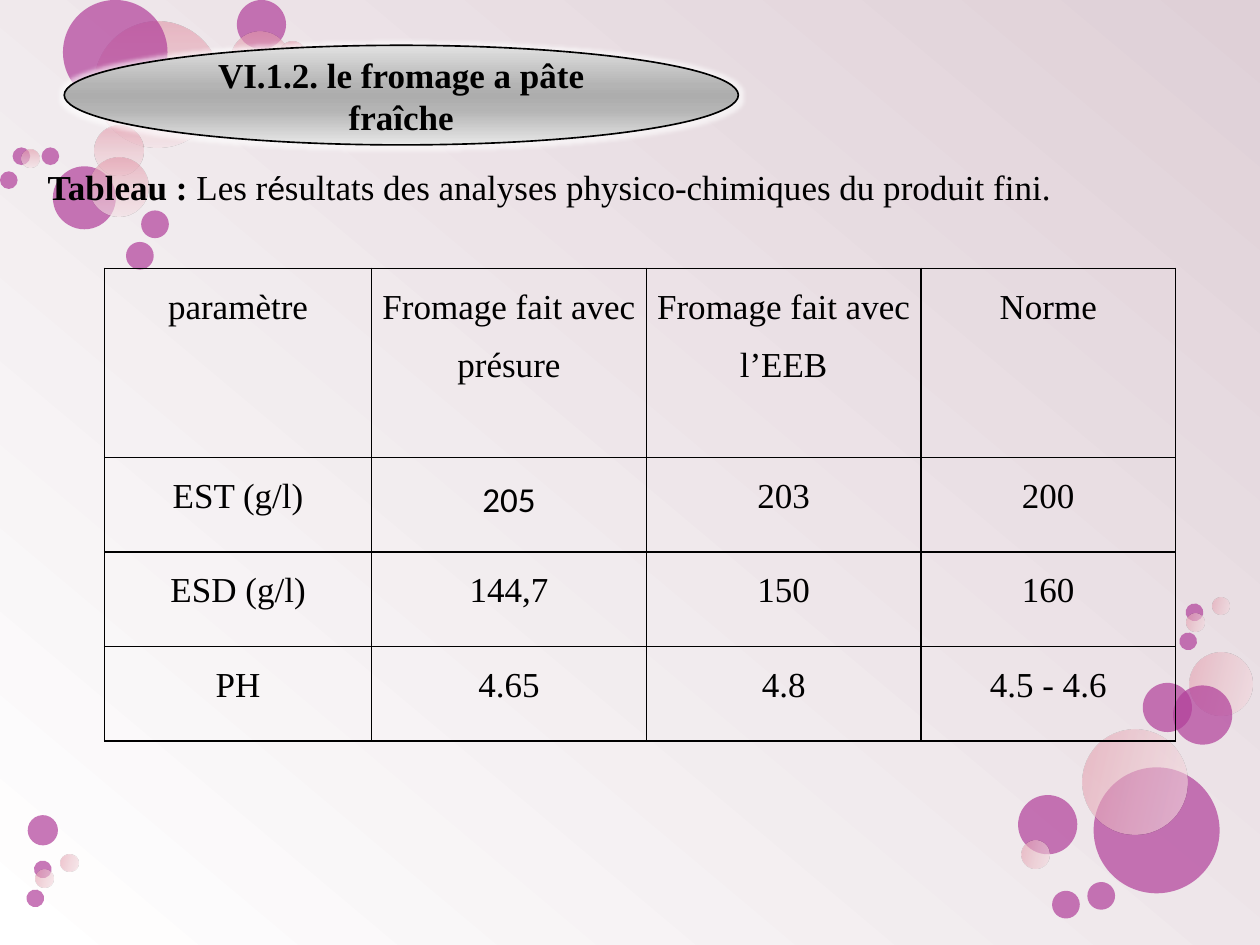
from lxml import etree
from pptx import Presentation
from pptx.dml.color import RGBColor
from pptx.enum.shapes import MSO_SHAPE
from pptx.enum.text import MSO_ANCHOR, MSO_AUTO_SIZE, PP_ALIGN
from pptx.oxml.ns import qn
from pptx.util import Pt

PX = 9144
OVAL = MSO_SHAPE.OVAL
MIDDLE = MSO_ANCHOR.MIDDLE
FIT_SHAPE = MSO_AUTO_SIZE.SHAPE_TO_FIT_TEXT
LEFT, CENTER = PP_ALIGN.LEFT, PP_ALIGN.CENTER
SERIF, SANS = "Times New Roman", "Calibri"
COLORS = {
    "ink": "000000",
    "purple": "B13F9A",
    "halo": "FFFFFF",
    "backdrop": [(0, "DFD0D7"), (100, "FFFFFF")],
    "pink": [(0, "E296A8"), (50, "EBC0C9"), (100, "F5E0E5")],
    "silver": [(0, "E1E1E1"), (40, "B4B4B4"), (50, "ADADAD"), (65, "B4B4B4"), (100, "E7E7E7")],
}


def write(paragraph, text, font=SERIF, size=20, bold=False, align=LEFT, spacing=None, before=None):
    paragraph.alignment = align
    paragraph.line_spacing = spacing
    paragraph.space_before = before
    run = paragraph.add_run()
    run.text = text
    run.font.name = font
    run.font.size = Pt(size)
    run.font.bold = bold
    run.font.color.rgb = RGBColor.from_string(COLORS["ink"])


def paint_gradient(fill, owner, stops, angle, opacity=100):
    fill.gradient()
    fill.gradient_angle = 360 - angle
    stop_list = owner.find(".//" + qn("a:gsLst"))
    for old_stop in list(stop_list):
        stop_list.remove(old_stop)
    for position, color in stops:
        stop = etree.SubElement(stop_list, qn("a:gs"), pos=str(position * 1000))
        tint = etree.SubElement(stop, qn("a:srgbClr"), val=color)
        etree.SubElement(tint, qn("a:alpha"), val=str(opacity * 1000))


prs = Presentation()
prs.slide_width, prs.slide_height = 1000 * PX, 750 * PX
slide = prs.slides.add_slide(prs.slide_layouts[6])
paint_gradient(slide.background.fill, slide._element, COLORS["backdrop"], 130)

upright_bubbles = [
    ("pink", 75, 17, 100), ("purple", 42, 132, 50), ("pink", 75, 100, 39),
    ("pink", 71, 125, 47), ("purple", 50, 0, 83), ("purple", 188, 0, 39),
    ("pink", 183, 25, 47), ("pink", 221, 33, 22), ("purple", 112, 167, 22),
    ("purple", 10, 117, 14), ("purple", 100, 192, 22), ("purple", 0, 136, 14),
    ("pink", 17, 119, 14), ("purple", 33, 117, 14),
]
turned_bubbles = [
    ("purple", 868, 609, 100), ("pink", 944, 518, 50), ("purple", 907, 542, 39),
    ("purple", 931, 544, 47), ("pink", 859, 579, 83), ("purple", 22, 647, 24),
    ("purple", 808, 631, 47), ("pink", 811, 667, 22), ("purple", 835, 707, 22),
    ("purple", 941, 479, 14), ("purple", 863, 700, 22), ("pink", 962, 474, 14),
    ("pink", 942, 487, 14), ("purple", 936, 502, 14), ("purple", 27, 683, 14),
    ("pink", 48, 678, 14), ("pink", 28, 690, 14), ("purple", 21, 706, 14),
]
for bubbles, turned in ((upright_bubbles, False), (turned_bubbles, True)):
    for tone, left, top, size in bubbles:
        bubble = slide.shapes.add_shape(OVAL, left * PX, top * PX, size * PX, size * PX)
        bubble.shadow.inherit = False
        bubble.line.fill.background()
        if tone == "pink":
            paint_gradient(bubble.fill, bubble._element, COLORS["pink"], 90, 60)
        else:
            bubble.fill.solid()
            bubble.fill.fore_color.rgb = RGBColor.from_string(COLORS["purple"])
            tint = bubble._element.spPr.find(".//" + qn("a:srgbClr"))
            etree.SubElement(tint, qn("a:alpha"), val="70000")
        if turned:
            bubble.rotation = 103.3
            bubble._element.spPr.find(qn("a:xfrm")).set("flipV", "1")

caption = slide.shapes.add_textbox(28 * PX, 126 * PX, 849 * PX, 44 * PX).text_frame
caption.word_wrap = False
caption.auto_size = FIT_SHAPE
caption.vertical_anchor = MIDDLE
caption_line = caption.paragraphs[0]
write(caption_line, "Tableau : ", bold=True)
write(caption_line, "Les r")
write(caption_line, "é", font=SANS)
write(caption_line, "sultats des analyses physico-chimiques du produit fini.")

results = [
    ["paramètre", "Fromage fait avec présure", "Fromage fait avec l’EEB", "Norme"],
    ["EST (g/l)", "205", "203", "200"],
    ["ESD (g/l)", "144,7", "150", "160"],
    ["PH", "4.65", "4.8", "4.5 - 4.6"],
]
table = slide.shapes.add_table(4, 4, 83 * PX, 213 * PX, 850 * PX, 375 * PX).table
table.first_row = False
table.horz_banding = False
for column, width in zip(table.columns, (212, 218, 218, 202)):
    column.width = width * PX
for row, height in zip(table.rows, (150, 75, 75, 75)):
    row.height = height * PX
for row, values in zip(table.rows, results):
    for cell, value in zip(row.cells, values):
        cell.margin_left = cell.margin_right = 7 * PX
        cell.margin_top = cell.margin_bottom = 0
        properties = cell._tc.get_or_add_tcPr()
        for side in ("a:lnL", "a:lnR", "a:lnT", "a:lnB"):
            border = etree.SubElement(properties, qn(side), w=str(Pt(1)))
            border_fill = etree.SubElement(border, qn("a:solidFill"))
            etree.SubElement(border_fill, qn("a:srgbClr"), val=COLORS["ink"])
        cell.fill.background()
        write(cell.text_frame.paragraphs[0], value, font=SANS if value == "205" else SERIF,
              align=CENTER, spacing=1.5, before=Pt(12))

heading = slide.shapes.add_shape(OVAL, 51 * PX, 36 * PX, 535 * PX, 79 * PX)
heading.shadow.inherit = False
halo = etree.SubElement(heading._element.spPr.find(qn("a:effectLst")), qn("a:glow"), rad=str(Pt(5)))
halo_color = etree.SubElement(halo, qn("a:srgbClr"), val=COLORS["halo"])
etree.SubElement(halo_color, qn("a:alpha"), val="60000")
paint_gradient(heading.fill, heading._element, COLORS["silver"], 90)
heading.line.color.rgb = RGBColor.from_string(COLORS["ink"])
heading.line.width = Pt(0.94)
heading.text_frame.word_wrap = True
heading.text_frame.vertical_anchor = MIDDLE
write(heading.text_frame.paragraphs[0], "VI.1.2. le fromage a pâte fraîche", bold=True, align=CENTER)

prs.save("out.pptx")
